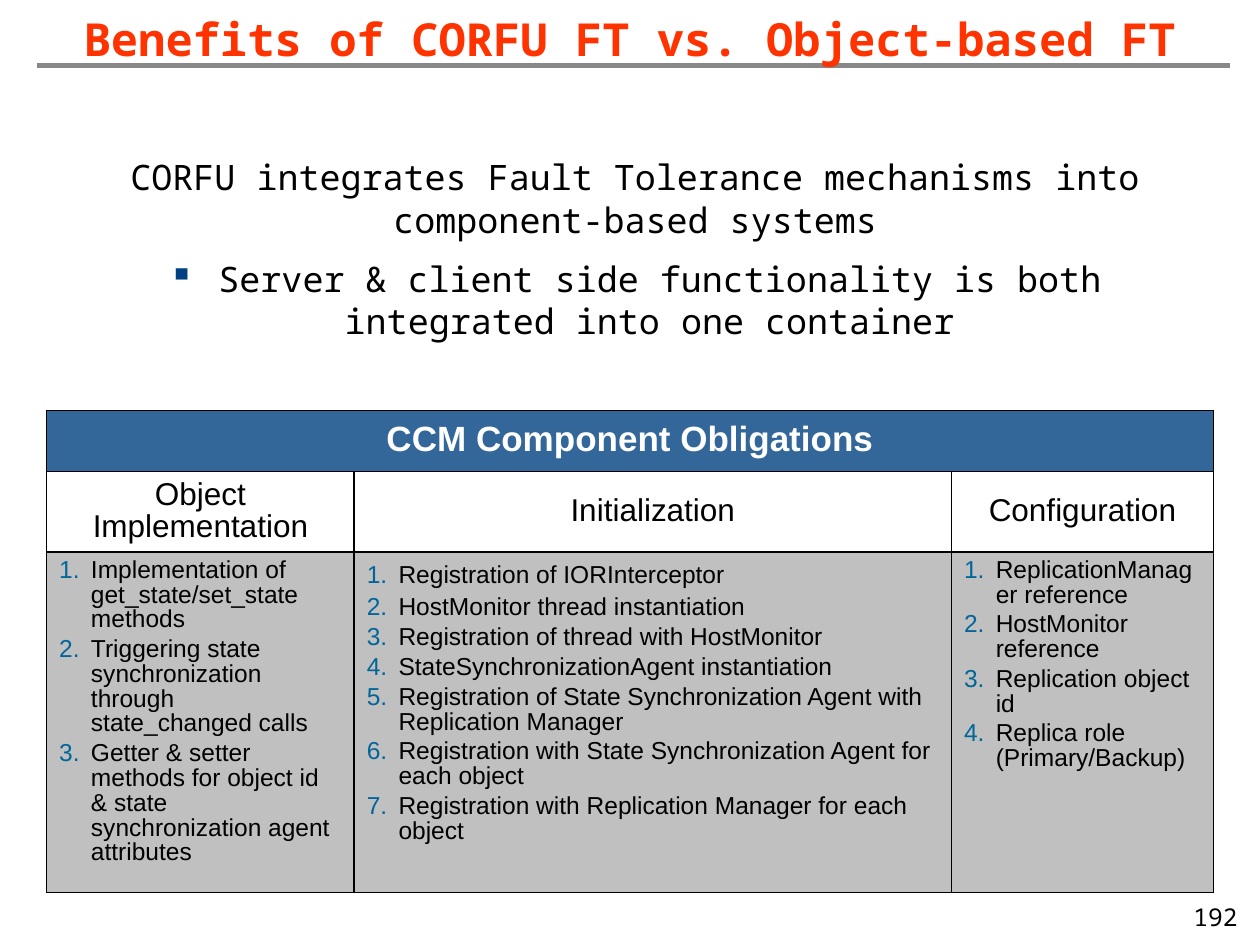
from lxml import etree
from pptx import Presentation
from pptx.dml.color import RGBColor
from pptx.enum.shapes import MSO_CONNECTOR
from pptx.enum.text import MSO_ANCHOR, PP_ALIGN
from pptx.oxml import parse_xml
from pptx.oxml.ns import nsdecls, qn
from pptx.util import Cm, Pt

LEFT, CENTER, RIGHT = PP_ALIGN.LEFT, PP_ALIGN.CENTER, PP_ALIGN.RIGHT
TOP, MIDDLE = MSO_ANCHOR.TOP, MSO_ANCHOR.MIDDLE
STRAIGHT = MSO_CONNECTOR.STRAIGHT
MONO, SANS = "Noto Sans Mono", "Arial"
COLORS = {
    "title": "FF3300", "rule": "888888", "text": "000000", "white": "FFFFFF",
    "head": "336699", "body": "C0C0C0", "number": "006699", "bullet": "004080",
}


def write(frame, lines, size, color="text", font=MONO, bold=False, align=LEFT, before=0):
    frame.word_wrap = True
    for i, line in enumerate(lines):
        para = frame.paragraphs[0] if i == 0 else frame.add_paragraph()
        para.text = line
        para.alignment = align
        para.space_before = Pt(before)
        for run in para.runs:
            run.font.name = font
            run.font.size = Pt(size)
            run.font.bold = bold
            run.font.color.rgb = RGBColor.from_string(COLORS[color])


def mark(para, indent, color, kind):
    props = para._p.get_or_add_pPr()
    props.set("marL", str(Cm(indent)))
    props.set("indent", str(-Cm(indent)))
    tint = etree.SubElement(props, qn("a:buClr"))
    etree.SubElement(tint, qn("a:srgbClr")).set("val", COLORS[color])
    if kind == "▪":
        etree.SubElement(props, qn("a:buChar")).set("char", kind)
    else:
        etree.SubElement(props, qn("a:buAutoNum")).set("type", kind)


deck = Presentation()
deck.slide_width, deck.slide_height = Cm(25.4), Cm(19.05)
slide = deck.slides.add_slide(deck.slide_layouts[6])
shapes = slide.shapes

rule = shapes.add_connector(STRAIGHT, Cm(0.74), Cm(1.32), Cm(24.79), Cm(1.32))
rule.line.color.rgb = RGBColor.from_string(COLORS["rule"])
rule.line.width = Pt(3)
etree.SubElement(rule._element.spPr, qn("a:effectLst"))

page = shapes.add_textbox(Cm(17.15), Cm(18.06), Cm(8.05), Cm(0.9))
write(page.text_frame, ["192"], 14, align=RIGHT)

intro = shapes.add_textbox(Cm(0.91), Cm(3.02), Cm(23.8), Cm(3.23))
write(intro.text_frame, [
    "CORFU integrates Fault Tolerance mechanisms into component-based systems",
    " Server & client side functionality is both integrated into one container",
], 20, align=CENTER, before=10)
mark(intro.text_frame.paragraphs[1], 0.58, "bullet", "▪")

title = shapes.add_textbox(Cm(0.86), Cm(0.03), Cm(23.7), Cm(1.47))
title.text_frame.vertical_anchor = MIDDLE
write(title.text_frame, ["Benefits of CORFU FT vs. Object-based FT"], 26, "title", bold=True, align=CENTER)

duties = {
    "Object Implementation": [
        "Implementation of get_state/set_state methods",
        "Triggering state synchronization through state_changed calls",
        "Getter & setter methods for object id & state synchronization agent attributes",
    ],
    "Initialization": [
        "Registration of IORInterceptor",
        "HostMonitor thread instantiation",
        "Registration of thread with HostMonitor",
        "StateSynchronizationAgent instantiation",
        "Registration of State Synchronization Agent with Replication Manager",
        "Registration with State Synchronization Agent for each object",
        "Registration with Replication Manager for each object",
    ],
    "Configuration": [
        "ReplicationManager reference",
        "HostMonitor reference",
        "Replication object id",
        "Replica role (Primary/Backup)",
    ],
}
widths, heights = [6.2, 12.04, 5.28], [1.22, 1.63, 6.8]
table = shapes.add_table(3, 3, Cm(0.94), Cm(8.28), Cm(sum(widths)), Cm(sum(heights))).table
for col, width in zip(table.columns, widths):
    col.width = Cm(width)
for row, height in zip(table.rows, heights):
    row.height = Cm(height)

table.cell(0, 0).merge(table.cell(0, 2))
write(table.cell(0, 0).text_frame, ["CCM Component Obligations"], 20, "white", SANS, True, CENTER)
for c, (name, tasks) in enumerate(duties.items()):
    write(table.cell(1, c).text_frame, [name], 18, font=SANS, align=CENTER)
    frame = table.cell(2, c).text_frame
    write(frame, tasks, 14, font=SANS, before=2.8)
    for para in frame.paragraphs:
        mark(para, 0.64, "number", "arabicPeriod")

for r, (fill, anchor) in enumerate([("head", MIDDLE), ("white", MIDDLE), ("body", TOP)]):
    for c in range(3):
        cell = table.cell(r, c)
        cell.vertical_anchor = anchor
        for para in cell.text_frame.paragraphs:
            para.line_spacing = 0.9
        props = cell._tc.get_or_add_tcPr()
        for side in ("lnL", "lnR", "lnT", "lnB"):
            props.append(parse_xml(
                f'<a:{side} {nsdecls("a")} w="{Pt(1)}"><a:solidFill>'
                f'<a:srgbClr val="{COLORS["text"]}"/></a:solidFill></a:{side}>'
            ))
        cell.fill.solid()
        cell.fill.fore_color.rgb = RGBColor.from_string(COLORS[fill])

first, second = table.cell(2, 1).text_frame.paragraphs[:2]
first.line_spacing, second.line_spacing = 1.1, 1.0

deck.save("out.pptx")
